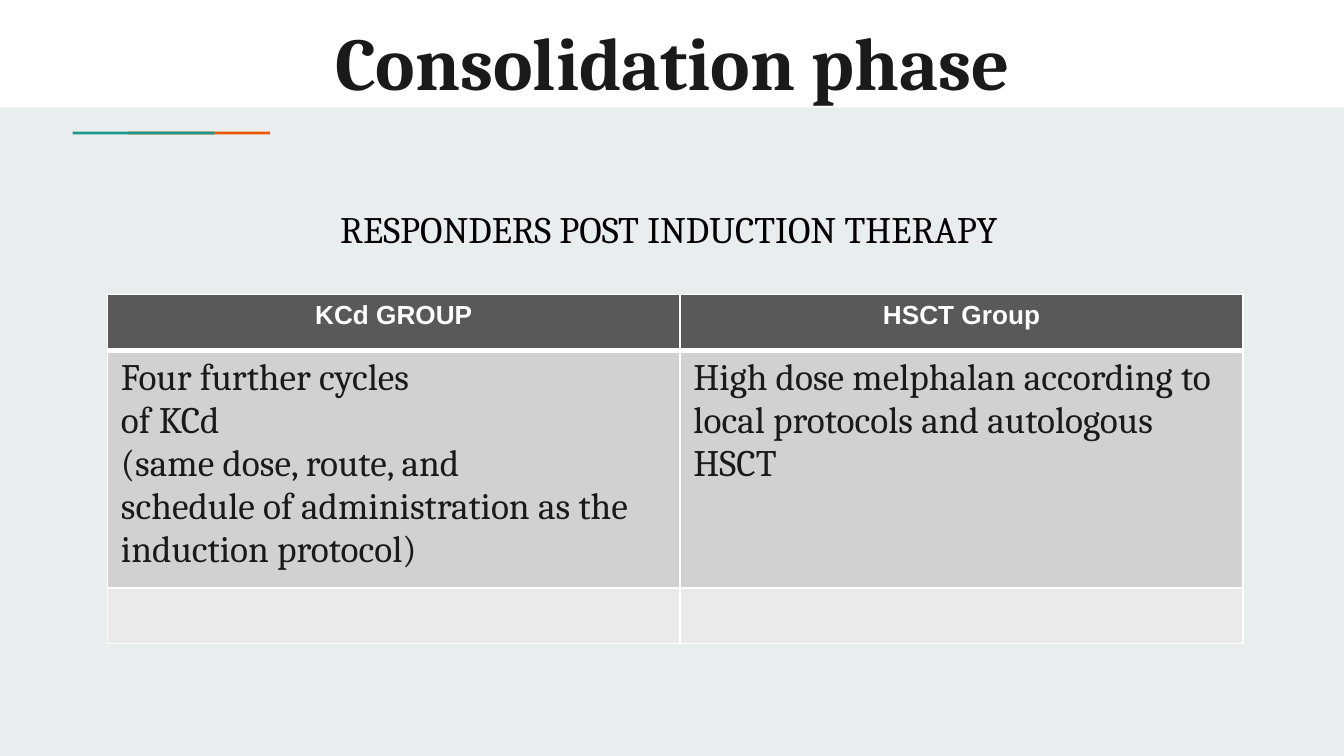
from lxml import etree
from pptx import Presentation, util as u
from pptx.dml.color import RGBColor
from pptx.enum import shapes, text
from pptx.oxml import ns

WIDTH = u.Inches(10)
HEIGHT = WIDTH * 9 // 16
MIST = RGBColor(0xE9, 0xED, 0xEE)
WHITE = RGBColor(0xFF, 0xFF, 0xFF)
BLACK = RGBColor(0, 0, 0)
INK = RGBColor(0x1A, 0x1A, 0x1A)
ORANGE = RGBColor(0xEB, 0x56, 0x00)
TEAL = RGBColor(0x1A, 0x99, 0x88)
HEADER_GREY = RGBColor(0x59, 0x59, 0x59)
BODY_GREY = RGBColor(0xD1, 0xD1, 0xD1)
PALE_GREY = RGBColor(0xEA, 0xEA, 0xEA)

HEADERS = ["KCd GROUP", "HSCT Group"]
TREATMENTS = [
    ["Four further cycles", "of KCd", "(same dose, route, and",
     "schedule of administration as the induction protocol)"],
    ["High dose melphalan according to local protocols and autologous HSCT"],
]


def area(left, top, width, height):
    """Return a box in slide units from lengths in inches."""
    return [u.Inches(length) for length in (left, top, width, height)]


def write(frame, lines, size, color, font="Cambria", bold=False, align=None):
    """Write one formatted paragraph for each line."""
    for index, line in enumerate(lines):
        para = frame.add_paragraph() if index else frame.paragraphs[0]
        para.alignment = align
        span = para.add_run()
        span.text = line
        span.font.size = u.Pt(size)
        span.font.name = font
        span.font.bold = bold
        span.font.color.rgb = color


def add_bar(page, box, color):
    """Add a plain filled rectangle."""
    bar = page.shapes.add_shape(shapes.MSO_SHAPE.RECTANGLE, *box)
    bar.shadow.inherit = False
    bar.fill.solid()
    bar.fill.fore_color.rgb = color
    bar.line.fill.background()


def add_accent(page, box):
    """Add the two overlapping accent strokes across the box."""
    left, top, width, height = box
    stroke = round(width * 0.72)
    add_bar(page, (left + width - stroke, top, stroke, height), ORANGE)
    add_bar(page, (left, top, stroke, height), TEAL)


def add_title(page, box, words):
    """Place and format the title placeholder."""
    title = page.shapes.title
    page.shapes._spTree.append(title._element)
    title.left, title.top, title.width, title.height = box
    frame = title.text_frame
    frame.word_wrap = True
    frame.auto_size = text.MSO_AUTO_SIZE.NONE
    frame.vertical_anchor = text.MSO_ANCHOR.MIDDLE
    frame.margin_left = frame.margin_right = u.Inches(0.1)
    frame.margin_top = frame.margin_bottom = u.Inches(0.1)
    write(frame, [words], 40, INK, bold=True, align=text.PP_ALIGN.CENTER)


def add_subtitle(page, box, words):
    """Add the centred line above the table."""
    frame = page.shapes.add_textbox(*box).text_frame
    frame.word_wrap = True
    frame.auto_size = text.MSO_AUTO_SIZE.SHAPE_TO_FIT_TEXT
    write(frame, [words], 20, BLACK, align=text.PP_ALIGN.CENTER)
    frame.paragraphs[0].line_spacing = 1.5


def style_cell(cell, color, top=1, bottom=1):
    """Give a cell white borders and a solid fill."""
    properties = cell._tc.get_or_add_tcPr()
    for side, points in (("L", 1), ("R", 1), ("T", top), ("B", bottom)):
        border = etree.SubElement(properties, ns.qn(f"a:ln{side}"), w=str(u.Pt(points)))
        paint = etree.SubElement(border, ns.qn("a:solidFill"))
        etree.SubElement(paint, ns.qn("a:srgbClr"), val=str(WHITE))
    cell.fill.solid()
    cell.fill.fore_color.rgb = color


def add_treatment_table(page, box):
    """Add the treatment table with shares for its columns and rows."""
    left, top, width, height = box
    table = page.shapes.add_table(3, 2, left, top, width, height).table
    for column, share in zip(table.columns, (4.26, 4.19)):
        column.width = round(width * share / 8.45)
    for row, share in zip(table.rows, (0.16, 0.68, 0.16)):
        row.height = round(height * share)
    for column, (header, treatment) in enumerate(zip(HEADERS, TREATMENTS)):
        head, body, foot = [table.cell(row, column) for row in range(3)]
        style_cell(head, HEADER_GREY, bottom=3)
        style_cell(body, BODY_GREY, top=3)
        style_cell(foot, PALE_GREY)
        write(head.text_frame, [header], 14, WHITE, "Arial", True, text.PP_ALIGN.CENTER)
        write(body.text_frame, treatment, 20, INK)


def build_page(deck):
    """Build the consolidation phase slide."""
    page = deck.slides.add_slide(deck.slide_layouts[5])
    page.background.fill.solid()
    page.background.fill.fore_color.rgb = MIST
    add_bar(page, (0, 0, WIDTH, u.Inches(0.8)), WHITE)
    add_accent(page, area(0.54, 0.98, 1.47, 0.02))
    add_title(page, area(0.8, 0, 8.41, 0.9), "Consolidation phase")
    add_subtitle(page, area(0.51, 1.32, 8.94, 0.6), "RESPONDERS POST INDUCTION THERAPY")
    add_treatment_table(page, area(0.8, 2.19, 8.45, 2.6))


def main():
    """Create and save the deck."""
    deck = Presentation()
    deck.slide_width, deck.slide_height = WIDTH, HEIGHT
    build_page(deck)
    deck.save("out.pptx")


if __name__ == "__main__":
    main()
